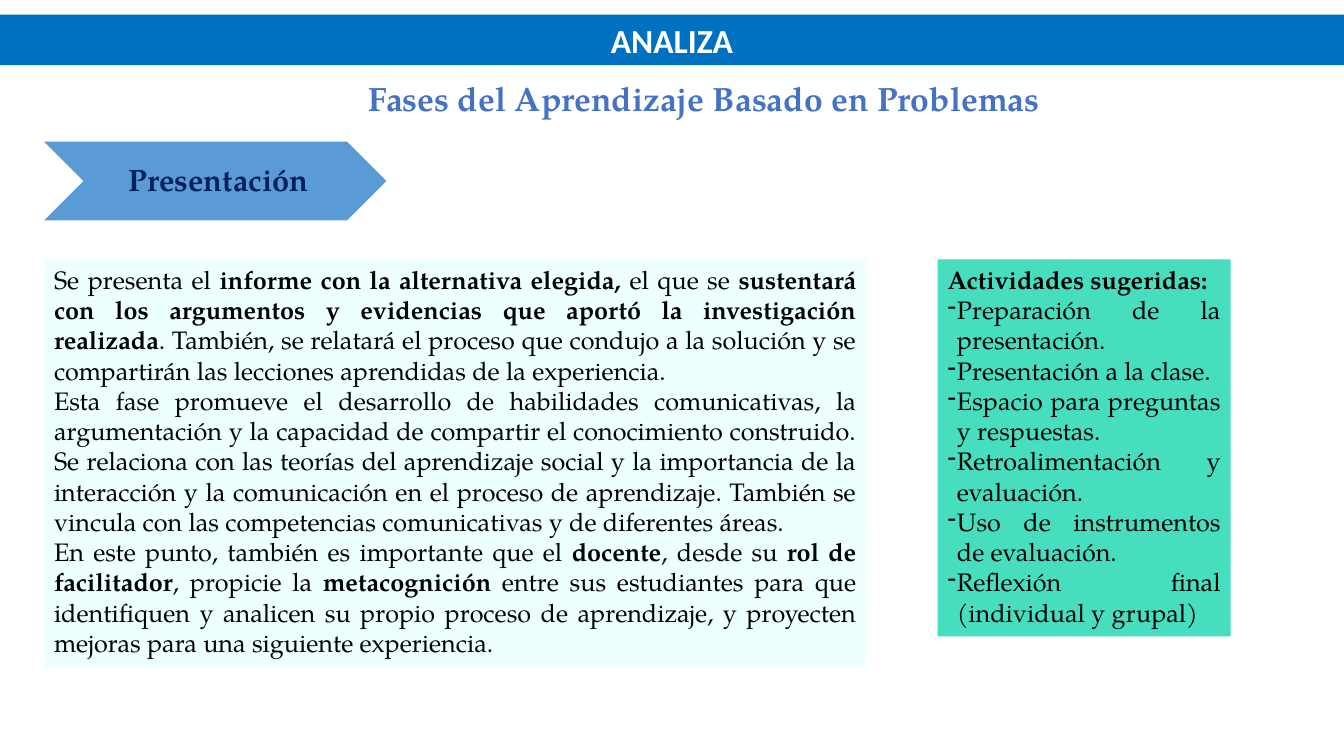
from dataclasses import dataclass

from lxml import etree
from pptx import Presentation
from pptx import util as u
from pptx.dml.color import RGBColor
from pptx.enum import shapes, text
from pptx.oxml import ns

EMU_PER_PX = 9525
SERIF = "TeX Gyre Pagella"
SANS = "Calibri"
COLORS = {
    "band": "0070C0",
    "heading": "4472C4",
    "chevron": "5B9BD5",
    "navy": "002060",
    "explanation": "EDFFFF",
    "activities": "46DEBF",
    "ink": "000001",
    "white": "FFFFFF",
}
DASH_INDENT = 9
BOLD_MARK = "*"
CENTER = text.PP_ALIGN.CENTER
JUSTIFY = text.PP_ALIGN.JUSTIFY


@dataclass(frozen=True)
class Box:
    left: int
    top: int
    width: int
    height: int


@dataclass(frozen=True)
class TextStyle:
    font: str
    size: int
    color: str
    align: text.PP_ALIGN


@dataclass(frozen=True)
class Panel:
    box: Box
    fill: str
    style: TextStyle
    lines: tuple[str, ...]
    dashed_from: int


BODY = TextStyle(SERIF, 18, "ink", JUSTIFY)
HEADING = TextStyle(SERIF, 24, "heading", CENTER)
PHASE = TextStyle(SERIF, 22, "navy", CENTER)
BAND = TextStyle(SANS, 24, "white", CENTER)

EXPLANATION_LINES = (
    "Se presenta el *informe con la alternativa elegida,* el que se "
    "*sustentará con los argumentos y evidencias que aportó la investigación "
    "realizada*. También, se relatará el proceso que condujo a la solución y "
    "se compartirán las lecciones aprendidas de la experiencia.",
    "Esta fase promueve el desarrollo de habilidades comunicativas, la "
    "argumentación y la capacidad de compartir el conocimiento construido. "
    "Se relaciona con las teorías del aprendizaje social y la importancia de "
    "la interacción y la comunicación en el proceso de aprendizaje. También "
    "se vincula con las competencias comunicativas y de diferentes áreas.",
    "En este punto, también es importante que el *docente*, desde su *rol de "
    "facilitador*, propicie la *metacognición* entre sus estudiantes para que "
    "identifiquen y analicen su propio proceso de aprendizaje, y proyecten "
    "mejoras para una siguiente experiencia.",
)
ACTIVITY_LINES = (
    "*Actividades sugeridas:*",
    "Preparación de la presentación.",
    "Presentación a la clase.",
    "Espacio para preguntas y respuestas.",
    "Retroalimentación y evaluación.",
    "Uso de instrumentos de evaluación.",
    "Reflexión final (individual y grupal)",
)
PANELS = (
    Panel(Box(42, 247, 783, 388), "explanation", BODY, EXPLANATION_LINES, 3),
    Panel(Box(893, 247, 279, 359), "activities", BODY, ACTIVITY_LINES, 1),
    Panel(Box(0, 14, 1280, 48), "band", BAND, ("*ANALIZA*",), 1),
)
TITLE_BOX = Box(265, 69, 811, 48)
CHEVRON_BOX = Box(42, 135, 326, 75)
PHASE_BOX = Box(113, 135, 185, 75)


def px(length: int) -> u.Emu:
    return u.Emu(length * EMU_PER_PX)


def edges(box: Box) -> tuple[u.Emu, ...]:
    return px(box.left), px(box.top), px(box.width), px(box.height)


def rgb(name: str) -> RGBColor:
    return RGBColor.from_string(COLORS[name])


def add_dash(paragraph) -> None:
    properties = paragraph._p.get_or_add_pPr()
    properties.set("marL", str(px(DASH_INDENT)))
    properties.set("indent", str(-px(DASH_INDENT)))
    dash = etree.Element(ns.qn("a:buChar"), char="-")
    properties.insert_element_before(dash, "a:tabLst", "a:defRPr", "a:extLst")


def write_line(paragraph, line: str, style: TextStyle) -> None:
    paragraph.alignment = style.align
    paragraph.font.name = style.font
    paragraph.font.size = u.Pt(style.size)
    paragraph.font.color.rgb = rgb(style.color)
    for index, part in enumerate(line.split(BOLD_MARK)):
        if part:
            run = paragraph.add_run()
            run.text = part
            run.font.bold = index % 2 == 1


def add_filled_shape(slide, kind: shapes.MSO_SHAPE, box: Box, fill: str):
    shape = slide.shapes.add_shape(kind, *edges(box))
    shape.shadow.inherit = False
    shape.fill.solid()
    shape.fill.fore_color.rgb = rgb(fill)
    shape.line.fill.background()
    return shape


def add_panel(slide, panel: Panel) -> None:
    shape = add_filled_shape(slide, shapes.MSO_SHAPE.RECTANGLE, panel.box, panel.fill)
    frame = shape.text_frame
    frame.word_wrap = True
    frame.auto_size = text.MSO_AUTO_SIZE.SHAPE_TO_FIT_TEXT
    frame.vertical_anchor = text.MSO_ANCHOR.TOP
    for index, line in enumerate(panel.lines):
        paragraph = frame.add_paragraph() if index else frame.paragraphs[0]
        write_line(paragraph, line, panel.style)
        if index >= panel.dashed_from:
            add_dash(paragraph)


def format_title(slide) -> None:
    title = slide.shapes.title
    title.left, title.top, title.width, title.height = edges(TITLE_BOX)
    frame = title.text_frame
    frame.word_wrap = True
    frame.auto_size = text.MSO_AUTO_SIZE.SHAPE_TO_FIT_TEXT
    frame.vertical_anchor = text.MSO_ANCHOR.TOP
    write_line(frame.paragraphs[0], "*Fases del Aprendizaje Basado en Problemas*", HEADING)


def add_phase(slide) -> None:
    add_filled_shape(slide, shapes.MSO_SHAPE.CHEVRON, CHEVRON_BOX, "chevron")
    frame = slide.shapes.add_textbox(*edges(PHASE_BOX)).text_frame
    frame.word_wrap = True
    frame.vertical_anchor = text.MSO_ANCHOR.MIDDLE
    frame.margin_left = px(7)
    frame.margin_top = frame.margin_right = frame.margin_bottom = px(2)
    paragraph = frame.paragraphs[0]
    paragraph.line_spacing = 0.9
    write_line(paragraph, "*Presentación*", PHASE)


def main() -> None:
    presentation = Presentation()
    presentation.slide_width, presentation.slide_height = px(1280), px(720)
    title_only = presentation.slide_layouts.get_by_name("Title Only")
    slide = presentation.slides.add_slide(title_only)
    format_title(slide)
    add_phase(slide)
    for panel in PANELS:
        add_panel(slide, panel)
    presentation.save("out.pptx")


if __name__ == "__main__":
    main()
